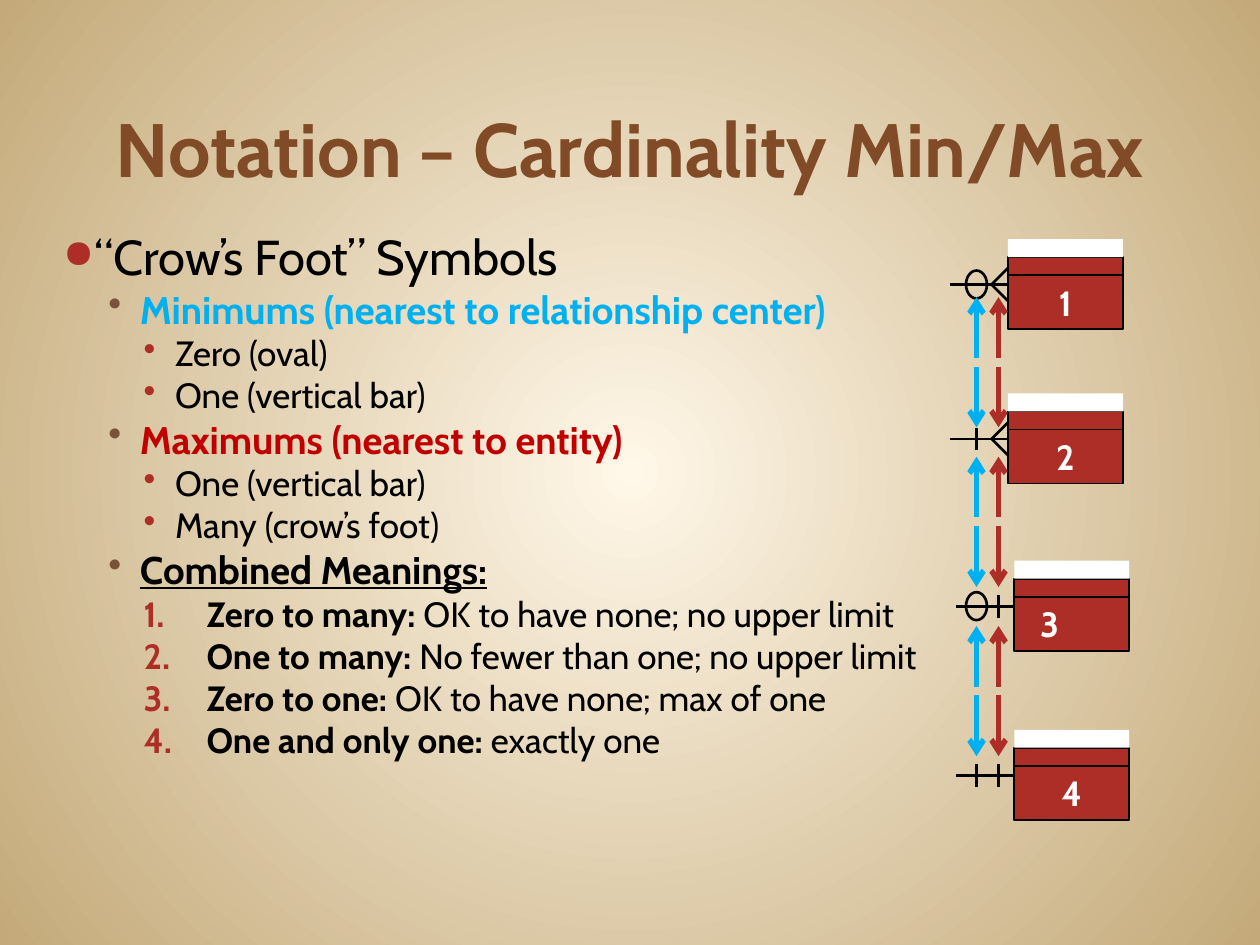
import pptx
import pptx.util
import pptx.dml.color
import pptx.enum.shapes
import pptx.enum.text
import pptx.oxml
import pptx.oxml.ns

Pt = pptx.util.Pt
RGB = pptx.dml.color.RGBColor
SHAPE = pptx.enum.shapes.MSO_SHAPE
LINE = pptx.enum.shapes.MSO_CONNECTOR.STRAIGHT
ALIGN = pptx.enum.text.PP_ALIGN
ANCHOR = pptx.enum.text.MSO_ANCHOR
qn = pptx.oxml.ns.qn

BLACK = RGB(0x00, 0x00, 0x00)
WHITE = RGB(0xFF, 0xFF, 0xFF)
RED = RGB(0xAD, 0x2E, 0x27)
BLUE = RGB(0x00, 0xB0, 0xF0)
CRIMSON = RGB(0xC0, 0x00, 0x00)
BROWN = RGB(0x80, 0x4B, 0x26)
UMBER = RGB(0x79, 0x53, 0x39)
CREAM = RGB(0xFF, 0xF7, 0xE8)
SAND = RGB(0xC4, 0xAA, 0x7A)

# Bullet styles: left margin, indent, colour, size in percent, mark
TOP = (0, -21.6, RED, 80, '<a:buChar {} char="●"/>')
HEAD = (44, -18, UMBER, 100, '<a:buChar {} char="•"/>')
ITEM = (64, -18, RED, 100, '<a:buChar {} char="•"/>')
STEP = (82, -36, RED, 100, '<a:buAutoNum {} type="arabicPeriod"/>')

# Each line: bullet style, size, colour, bold part, plain part
LINES = [
    (TOP, 28, BLACK, "", "“Crow’s Foot” Symbols"),
    (HEAD, 22, BLUE, "Minimums (nearest to relationship center)", ""),
    (ITEM, 20, BLACK, "", "Zero (oval)"),
    (ITEM, 20, BLACK, "", "One (vertical bar)"),
    (HEAD, 22, CRIMSON, "Maximums (nearest to entity)", ""),
    (ITEM, 20, BLACK, "", "One (vertical bar)"),
    (ITEM, 20, BLACK, "", "Many (crow’s foot)"),
    (HEAD, 22, BLACK, "Combined Meanings:", ""),
    (STEP, 20, BLACK, "Zero to many: ", "OK to have none; no upper limit"),
    (STEP, 20, BLACK, "One to many:", " No fewer than one; no upper limit"),
    (STEP, 20, BLACK, "Zero to one:", " OK to have none; max of one"),
    (STEP, 20, BLACK, "One and only one:", " exactly one"),
]

# Each entity: label, left, top, minimum mark, maximum mark
ROWS = [
    ("1", 576, 136.6, "zero", "many"),
    ("2", 576, 224.8, "one", "many"),
    ("3\t", 579.6, 320.4, "zero", "one"),
    ("4", 579.6, 417, "one", "one"),
]
MIN_X, MAX_X = 558, 570.6
WIDE, BAND, BODY = 65.7, 10.3, 31
MIDS = (204.5, 295.7, 392.4)


def parse(text):
    return pptx.oxml.parse_xml(text.format(pptx.oxml.ns.nsdecls("a")))


class Board:
    font = "Cabin"

    def __init__(self, slide):
        self.slide = slide
        self.shapes = slide.shapes

    def style(self, run, size, color, bold):
        font = run.font
        font.name, font.size, font.bold = self.font, Pt(size), bold
        font.color.rgb = color

    def back(self, inner, outer):
        fill = self.slide.background.fill
        fill.gradient()
        for stop, color, place in zip(fill.gradient_stops, (inner, outer), (0, 1)):
            stop.color.rgb = color
            stop.position = place
        grad = self.slide.background._cSld.find(".//" + qn("a:gradFill"))
        grad.replace(grad.find(qn("a:lin")), parse(
            '<a:path {} path="circle"><a:fillToRect l="50000" t="50000"'
            ' r="50000" b="50000"/></a:path>'))

    def title(self, text, x, y, w, h):
        box = self.shapes.title
        box.left, box.top, box.width, box.height = Pt(x), Pt(y), Pt(w), Pt(h)
        frame = box.text_frame
        frame.text = text
        frame.vertical_anchor = ANCHOR.BOTTOM
        para = frame.paragraphs[0]
        para.alignment = ALIGN.CENTER
        self.style(para.runs[0], 43.2, BROWN, True)

    def bullet(self, para, kind):
        left, indent, color, size, mark = kind
        props = para._p.get_or_add_pPr()
        props.set("marL", str(int(Pt(left))))
        props.set("indent", str(int(Pt(indent))))
        props.append(parse(f'<a:buClr {{}}><a:srgbClr val="{color}"/></a:buClr>'))
        props.append(parse(f'<a:buSzPct {{}} val="{size * 1000}"/>'))
        props.append(parse(mark))

    def outline(self, lines, x, y, w, h):
        frame = self.shapes.add_textbox(Pt(x), Pt(y), Pt(w), Pt(h)).text_frame
        frame.word_wrap = True
        frame.margin_left = frame.margin_right = Pt(3.6)
        frame.margin_top = frame.margin_bottom = Pt(3.6)
        for i, (kind, size, color, strong, plain) in enumerate(lines):
            para = frame.add_paragraph() if i else frame.paragraphs[0]
            if kind in (HEAD, ITEM, STEP):
                para.level = 1 if kind is HEAD else 2
            self.bullet(para, kind)
            for text, bold in ((strong, True), (plain, False)):
                if text:
                    run = para.add_run()
                    run.text = text
                    self.style(run, size, color, bold)
                    if text == "Combined Meanings:":
                        run.font.underline = True

    def block(self, kind, x, y, w, h, fill=None, line=None, text=""):
        shape = self.shapes.add_shape(kind, Pt(x), Pt(y), Pt(w), Pt(h))
        shape.shadow.inherit = False
        if fill is None:
            shape.fill.background()
        else:
            shape.fill.solid()
            shape.fill.fore_color.rgb = fill
        if line is None:
            shape.line.fill.background()
        else:
            shape.line.color.rgb = BLACK
            shape.line.width = Pt(line)
        if text:
            shape.text_frame.text = text
            para = shape.text_frame.paragraphs[0]
            para.alignment = ALIGN.CENTER
            self.style(para.runs[0], 20, WHITE, True)

    def line(self, x1, y1, x2, y2, color=BLACK, width=1.5, arrow=False):
        link = self.shapes.add_connector(LINE, Pt(x1), Pt(y1), Pt(x2), Pt(y2))
        link.line.color.rgb = color
        link.line.width = Pt(width)
        if arrow:
            link.line._get_or_add_ln().append(parse('<a:tailEnd {} type="arrow"/>'))
        link._element.spPr.append(parse("<a:effectLst {}/>"))

    def mark(self, kind, x, y, edge):
        if kind == "zero":
            self.block(SHAPE.OVAL, x - 6, y - 8, 12, 16, line=1.5)
        elif kind == "one":
            self.line(x, y + 6.5, x, y - 6.5)
        else:
            for rise in (-9.4, 9.4):
                self.line(edge - 9.4, y, edge, y + rise)

    def entity(self, text, x, y, low, high):
        self.block(SHAPE.RECTANGLE, x, y + 2 * BAND, WIDE, BODY, RED, 1, text)
        self.block(SHAPE.RECTANGLE, x, y + BAND, WIDE, BAND, RED, 1)
        self.block(SHAPE.RECTANGLE, x, y, WIDE, BAND, WHITE)
        mid = y + 26
        self.line(x - 33.1, mid, x, mid)
        self.mark(low, MIN_X, mid, x)
        self.mark(high, MAX_X, mid, x)


def main():
    deck = pptx.Presentation()
    deck.slide_width, deck.slide_height = Pt(720), Pt(540)
    board = Board(deck.slides.add_slide(deck.slide_layouts[5]))
    board.back(CREAM, SAND)

    # Title and outline
    board.title("Notation – Cardinality Min/Max", 36, 23.8, 648, 90)
    board.outline(LINES, 32.4, 126, 497.5, 356.4)

    # Entities with their cardinality marks
    for row in ROWS:
        board.entity(*row)

    # Arrows from between the rows to the marks above and below
    for mid in MIDS:
        for x, color in ((MAX_X, RED), (MIN_X, BLUE)):
            board.line(x, mid, x, mid - 34.7, color, 3, True)
            board.line(x, mid + 5, x, mid + 39.7, color, 3, True)

    deck.save("out.pptx")


if __name__ == "__main__":
    main()
